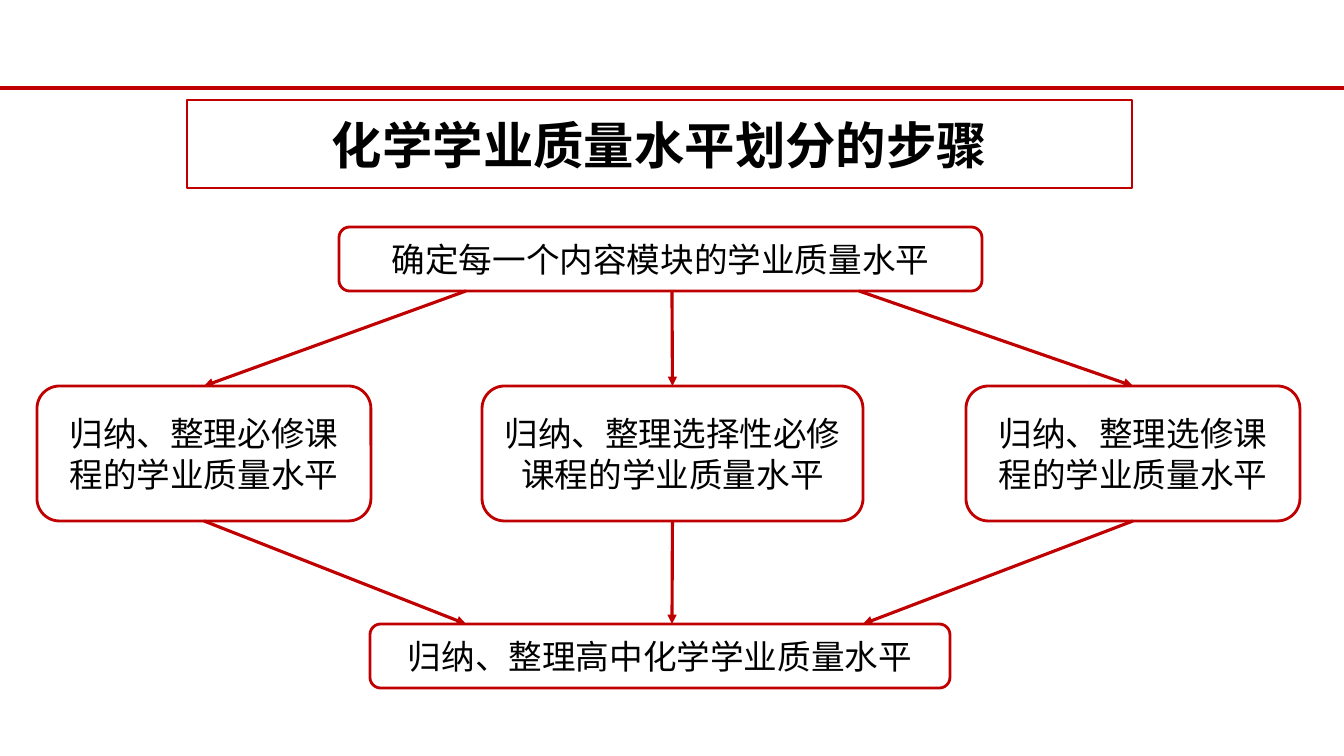
from pptx import Presentation
from pptx.dml.color import RGBColor
from pptx.enum.shapes import MSO_CONNECTOR, MSO_SHAPE
from pptx.enum.text import MSO_ANCHOR, PP_ALIGN
from pptx.oxml.ns import qn
from pptx.util import Emu, Pt
from lxml import etree

RECT, ROUNDED = MSO_SHAPE.RECTANGLE, MSO_SHAPE.ROUNDED_RECTANGLE
STRAIGHT = MSO_CONNECTOR.STRAIGHT
CENTER, MIDDLE = PP_ALIGN.CENTER, MSO_ANCHOR.MIDDLE
TOP_SIDE, BOTTOM_SIDE = 0, 2

RED = RGBColor(0xC0, 0x00, 0x00)
WHITE = RGBColor(0xFF, 0xFF, 0xFF)
BLACK = RGBColor(0x00, 0x00, 0x00)
FONT = "Noto Sans CJK SC"

SLIDE_W, SLIDE_H = 1344, 756
EMU_PER_PX = 914400 / 100.8


def px(length):
    return Emu(round(length * EMU_PER_PX))


def add_box(page, kind, box, text, size=24, bold=False, fill=WHITE, spacing=None):
    """Outlined box with centred text; box is (left, top, width, height) in px."""
    shape = page.shapes.add_shape(kind, *map(px, box))
    shape.shadow.inherit = False
    if fill is None:
        shape.fill.background()
    else:
        shape.fill.solid()
        shape.fill.fore_color.rgb = fill
    shape.line.color.rgb = RED
    shape.line.width = Pt(2)

    frame = shape.text_frame
    frame.word_wrap = True
    frame.vertical_anchor = MIDDLE
    para = frame.paragraphs[0]
    para.text = text
    para.alignment = CENTER
    if spacing:
        para.line_spacing = spacing
    font = para.font
    font.size, font.bold, font.name = Pt(size), bold, FONT
    font.color.rgb = BLACK
    # East Asian typeface
    defaults = para._p.pPr.find(qn("a:defRPr"))
    etree.SubElement(defaults, qn("a:ea"), typeface=FONT)
    return shape


def add_line(page, start, end, arrow=False):
    line = page.shapes.add_connector(STRAIGHT, *map(px, start + end))
    line.line.color.rgb = RED
    line.line.width = Pt(2.25)
    if arrow:
        outline = line.line._get_or_add_ln()
        etree.SubElement(outline, qn("a:tailEnd"), type="triangle")
    etree.SubElement(line._element.spPr, qn("a:effectLst"))
    return line


def add_header(page, box):
    left, top, width, height = box
    # Rule across the slide, then the framed title
    add_line(page, (left, top), (left + width, top))
    add_box(page, RECT, (left + 187, top + 12, 945, height - 12),
            "化学学业质量水平划分的步骤", size=36, bold=True, fill=None)


def add_flow(page, box):
    left, top, width, height = box
    end_height = 64
    start_bottom = top + end_height
    finish_top = top + height - end_height
    stage_top, stage_height = top + 159, 135

    # First and last steps
    add_box(page, ROUNDED, (left + 302, top, 643, end_height),
            "确定每一个内容模块的学业质量水平")
    add_box(page, ROUNDED, (left + 333, finish_top, 580, end_height),
            "归纳、整理高中化学学业质量水平")

    # Parallel steps: offset, width, text, x of arrow in, x of arrow out
    stages = [
        (0, 334, "归纳、整理必修课程的学业质量水平", 429, 429),
        (445, 381, "归纳、整理选择性必修课程的学业质量水平", 635, 635),
        (width - 334, 334, "归纳、整理选修课程的学业质量水平", 822, 826),
    ]
    for offset, stage_width, text, source, target in stages:
        stage = add_box(page, ROUNDED,
                        (left + offset, stage_top, stage_width, stage_height),
                        text, spacing=Pt(29))
        center = left + offset + stage_width // 2
        arrow_in = add_line(page, (left + source, start_bottom),
                            (center, stage_top), arrow=True)
        arrow_in.end_connect(stage, TOP_SIDE)
        arrow_out = add_line(page, (center, stage_top + stage_height),
                             (left + target, finish_top), arrow=True)
        arrow_out.begin_connect(stage, BOTTOM_SIDE)


def main():
    deck = Presentation()
    deck.slide_width, deck.slide_height = px(SLIDE_W), px(SLIDE_H)
    page = deck.slides.add_slide(deck.slide_layouts[6])
    add_header(page, (0, 88, SLIDE_W, 100))
    add_flow(page, (37, 227, 1263, 461))
    deck.save("out.pptx")


if __name__ == "__main__":
    main()
